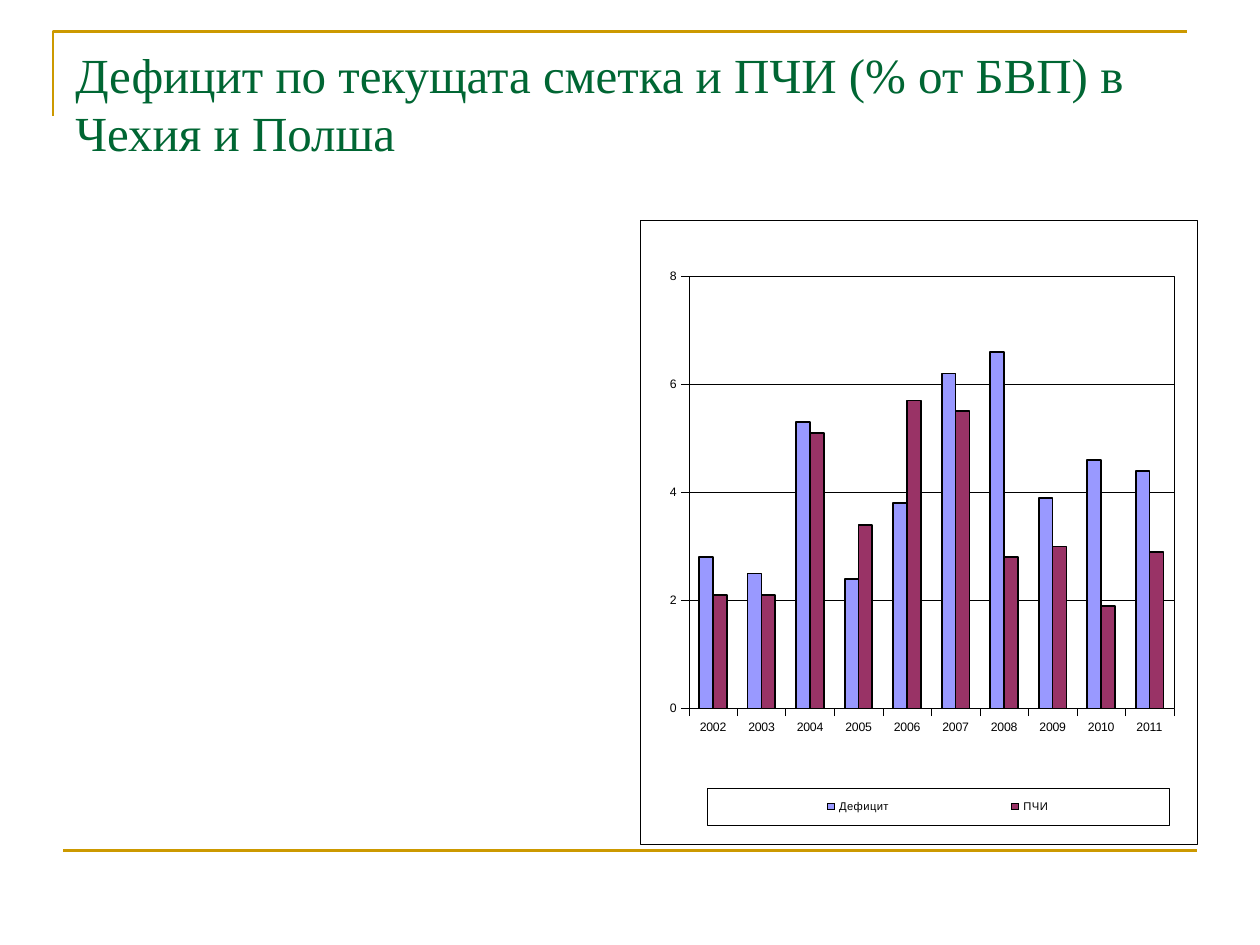
from dataclasses import dataclass

from lxml import etree
from pptx import Presentation
from pptx.chart.data import CategoryChartData
from pptx.dml.color import RGBColor
from pptx.enum.chart import XL_CHART_TYPE as ChartType
from pptx.enum.chart import XL_LEGEND_POSITION as LegendPosition
from pptx.enum.chart import XL_TICK_LABEL_POSITION as LabelPosition
from pptx.enum.chart import XL_TICK_MARK as TickMark
from pptx.enum.shapes import MSO_CONNECTOR as Connector
from pptx.enum.text import MSO_ANCHOR as Anchor
from pptx.oxml import parse_xml
from pptx.oxml.ns import qn
from pptx.util import Inches, Pt

CHART_NS = ('xmlns:c="http://schemas.openxmlformats.org/drawingml/2006/chart" '
            'xmlns:a="http://schemas.openxmlformats.org/drawingml/2006/main"')


@dataclass(frozen=True)
class Theme:
    title_font: str = "Times New Roman"
    chart_font: str = "Arial"
    title: str = "006633"
    rule: str = "CC9900"
    ink: str = "000000"
    paper: str = "FFFFFF"
    series: tuple = ("9999FF", "993366")
    title_size: float = 28
    axis_size: float = 7
    legend_size: float = 6.4
    rule_width: float = 1.5
    hairline: float = 0.25
    bar_outline: float = 1


def manual_layout(x, y, w, h, inner=False):
    target = '<c:layoutTarget val="inner"/>' if inner else ""
    return parse_xml(
        f'<c:layout {CHART_NS}><c:manualLayout>{target}'
        '<c:xMode val="edge"/><c:yMode val="edge"/>'
        f'<c:x val="{x}"/><c:y val="{y}"/><c:w val="{w}"/><c:h val="{h}"/>'
        '</c:manualLayout></c:layout>')


class SlideBuilder:
    def __init__(self, slide, theme):
        self.slide, self.theme = slide, theme

    def set_line(self, line, color, width):
        line.color.rgb = RGBColor.from_string(color)
        line.width = Pt(width)

    def set_font(self, font, name, size, color):
        font.name, font.size = name, Pt(size)
        font.color.rgb = RGBColor.from_string(color)

    def frame(self):
        """Paper fill with a hairline border, for chart parts."""
        return parse_xml(
            f'<c:spPr {CHART_NS}><a:solidFill><a:srgbClr val="{self.theme.paper}"/>'
            f'</a:solidFill><a:ln w="{Pt(self.theme.hairline)}"><a:solidFill>'
            f'<a:srgbClr val="{self.theme.ink}"/></a:solidFill></a:ln></c:spPr>')

    def corner(self, points):
        start, *rest = [(Inches(x), Inches(y)) for x, y in points]
        builder = self.slide.shapes.build_freeform(*start)
        builder.add_line_segments(rest, close=False)
        bracket = builder.convert_to_shape()
        bracket.shadow.inherit = False
        bracket.fill.background()
        self.set_line(bracket.line, self.theme.rule, self.theme.rule_width)

    def rule(self, x1, y1, x2, y2):
        rule = self.slide.shapes.add_connector(
            Connector.STRAIGHT, *map(Inches, (x1, y1, x2, y2)))
        self.set_line(rule.line, self.theme.rule, self.theme.rule_width)
        etree.SubElement(rule._element.spPr, qn("a:effectLst"))

    def title(self, text, *box):
        frame = self.slide.shapes.add_textbox(*map(Inches, box)).text_frame
        frame.word_wrap = True
        frame.vertical_anchor = Anchor.TOP
        frame.text = text
        self.set_font(frame.paragraphs[0].runs[0].font, self.theme.title_font,
                      self.theme.title_size, self.theme.title)

    def column_chart(self, categories, series, *box):
        theme = self.theme
        data = CategoryChartData(number_format="0.0")
        data.categories = categories
        for name, values in series.items():
            data.add_series(name, values)
        chart = self.slide.shapes.add_chart(
            ChartType.COLUMN_CLUSTERED, *map(Inches, box), data).chart
        chart.has_title = False
        self.set_font(chart.font, theme.chart_font, theme.axis_size, theme.ink)

        # Columns
        plot = chart.plots[0]
        plot.gap_width, plot.overlap = 150, 0
        plot.vary_by_categories = False
        for columns, color in zip(plot.series, theme.series):
            columns.format.fill.solid()
            columns.format.fill.fore_color.rgb = RGBColor.from_string(color)
            self.set_line(columns.format.line, theme.ink, theme.bar_outline)

        # Axes
        years, percent = chart.category_axis, chart.value_axis
        for axis in (years, percent):
            axis.major_tick_mark = TickMark.OUTSIDE
            axis.minor_tick_mark = TickMark.NONE
            self.set_font(axis.tick_labels.font, theme.chart_font,
                          theme.axis_size, theme.ink)
            self.set_line(axis.format.line, theme.ink, theme.hairline)
        years.tick_label_position = LabelPosition.LOW
        percent.minimum_scale, percent.maximum_scale = 0, 8
        percent.major_unit = 2
        percent.tick_labels.number_format = "0"
        percent.tick_labels.number_format_is_linked = False
        percent.has_major_gridlines = True
        self.set_line(percent.major_gridlines.format.line, theme.ink, theme.hairline)

        # Legend
        chart.has_legend = True
        legend = chart.legend
        legend.position = LegendPosition.BOTTOM
        legend.include_in_layout = False
        self.set_font(legend.font, theme.chart_font, theme.legend_size, theme.ink)
        key = legend._element
        key.find(qn("c:legendPos")).addnext(manual_layout(0.12, 0.91, 0.83, 0.06))
        key.find(qn("c:txPr")).addprevious(self.frame())

        # Plot position and frames
        space = chart._chartSpace
        area = space.chart.plotArea
        for layout in area.findall(qn("c:layout")):
            area.remove(layout)
        area.insert(0, manual_layout(0.087, 0.089, 0.872, 0.694, inner=True))
        area.append(self.frame())
        space.chart.addnext(self.frame())


def main():
    deck = Presentation()
    deck.slide_width, deck.slide_height = Inches(10), Inches(7.5)
    page = SlideBuilder(deck.slides.add_slide(deck.slide_layouts[6]), Theme())

    # Decorative rules
    page.corner([(0.42, 0.92), (0.42, 0.25), (9.42, 0.25)])
    page.rule(0.5, 6.75, 9.5, 6.75)

    # Title
    page.title("Дефицит по текущата сметка и ПЧИ (% от БВП) в Чехия и Полша",
               0.5, 0.3, 9, 1.25)

    # Deficit and foreign investment by year
    page.column_chart(
        [str(year) for year in range(2002, 2012)],
        {"Дефицит": (2.8, 2.5, 5.3, 2.4, 3.8, 6.2, 6.6, 3.9, 4.6, 4.4),
         "ПЧИ": (2.1, 2.1, 5.1, 3.4, 5.7, 5.5, 2.8, 3, 1.9, 2.9)},
        5.08, 1.75, 4.42, 4.95)

    deck.save("out.pptx")


if __name__ == "__main__":
    main()
